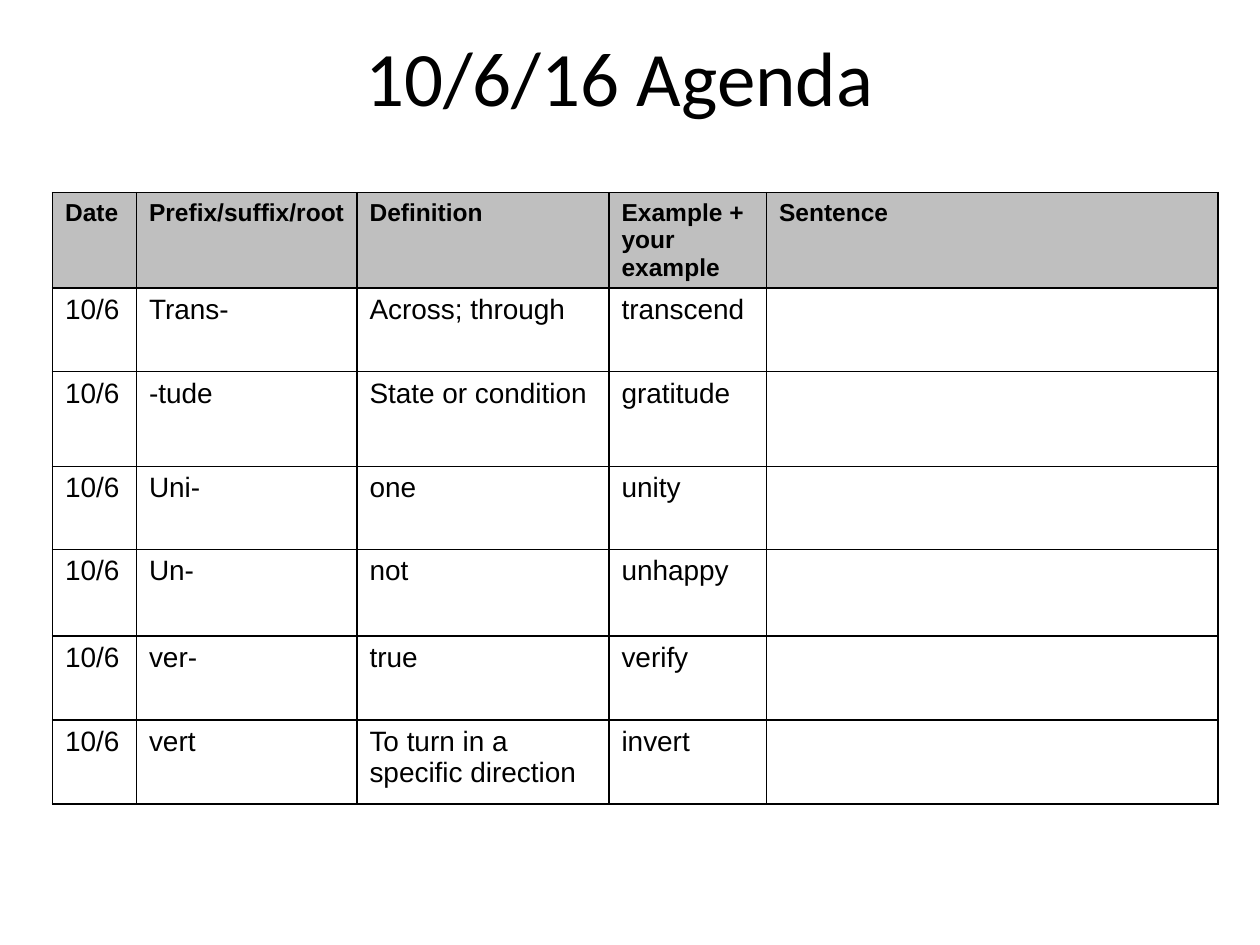
from typing import NamedTuple

from lxml.etree import SubElement
from pptx import Presentation
from pptx.dml.color import RGBColor
from pptx.enum.text import MSO_ANCHOR, PP_ALIGN
from pptx.oxml.ns import qn
from pptx.util import Pt

COLORS = {"text": "000000", "border": "000000", "header": "BFBFBF"}


class Column(NamedTuple):
    heading: str
    width: float


class Entry(NamedTuple):
    prefix: str
    definition: str
    example: str
    height: float


COLUMNS = [
    Column("Date", 48),
    Column("Prefix/suffix/root", 126),
    Column("Definition", 144),
    Column("Example + your example", 90),
    Column("Sentence", 258),
]
ENTRIES = [
    Entry("Trans-", "Across; through", "transcend", 48),
    Entry("-tude", "State or condition", "gratitude", 54),
    Entry("Uni-", "one", "unity", 47.5),
    Entry("Un-", "not", "unhappy", 49.5),
    Entry("ver-", "true", "verify", 48),
    Entry("vert", "To turn in a specific direction", "invert", 48),
]
DATE = "10/6"
HEADER_HEIGHT = 48


def format_font(font, name: str, size: float, bold: bool = False) -> None:
    font.name = name
    font.size = Pt(size)
    font.bold = bold
    font.color.rgb = RGBColor.from_string(COLORS["text"])


def add_borders(cell) -> None:
    properties = cell._tc.get_or_add_tcPr()
    for position, side in enumerate(("a:lnL", "a:lnR", "a:lnT", "a:lnB")):
        line = SubElement(properties, qn(side), w=str(Pt(1)))
        fill = SubElement(line, qn("a:solidFill"))
        SubElement(fill, qn("a:srgbClr"), val=COLORS["border"])
        properties.insert(position, line)


def write_cell(cell, text: str, header: bool) -> None:
    cell.text = text
    format_font(cell.text_frame.paragraphs[0].font, "Arial", 14 if header else 16, header)
    if header:
        cell.fill.solid()
        cell.fill.fore_color.rgb = RGBColor.from_string(COLORS["header"])
    else:
        cell.fill.background()
    add_borders(cell)


def add_title(slide, text: str) -> None:
    title = slide.shapes.title
    title.left, title.top, title.width, title.height = Pt(48), Pt(21.5), Pt(612), Pt(44)
    title.text = text
    title.text_frame.vertical_anchor = MSO_ANCHOR.MIDDLE
    paragraph = title.text_frame.paragraphs[0]
    paragraph.alignment = PP_ALIGN.CENTER
    format_font(paragraph.font, "Calibri", 44)


def add_vocabulary_table(slide) -> None:
    rows = [[column.heading for column in COLUMNS]]
    rows += [[DATE, entry.prefix, entry.definition, entry.example, ""] for entry in ENTRIES]
    heights = [HEADER_HEIGHT] + [entry.height for entry in ENTRIES]
    width = sum(column.width for column in COLUMNS)
    table = slide.shapes.add_table(
        len(rows), len(COLUMNS), Pt(30), Pt(110), Pt(width), Pt(sum(heights))
    ).table
    for table_column, column in zip(table.columns, COLUMNS):
        table_column.width = Pt(column.width)
    for row_index, (texts, height) in enumerate(zip(rows, heights)):
        table.rows[row_index].height = Pt(height)
        for column_index, text in enumerate(texts):
            write_cell(table.cell(row_index, column_index), text, row_index == 0)


def main() -> None:
    presentation = Presentation()
    presentation.slide_width, presentation.slide_height = Pt(720), Pt(540)
    slide = presentation.slides.add_slide(presentation.slide_layouts[5])
    add_title(slide, "10/6/16 Agenda")
    add_vocabulary_table(slide)
    presentation.save("out.pptx")


if __name__ == "__main__":
    main()
